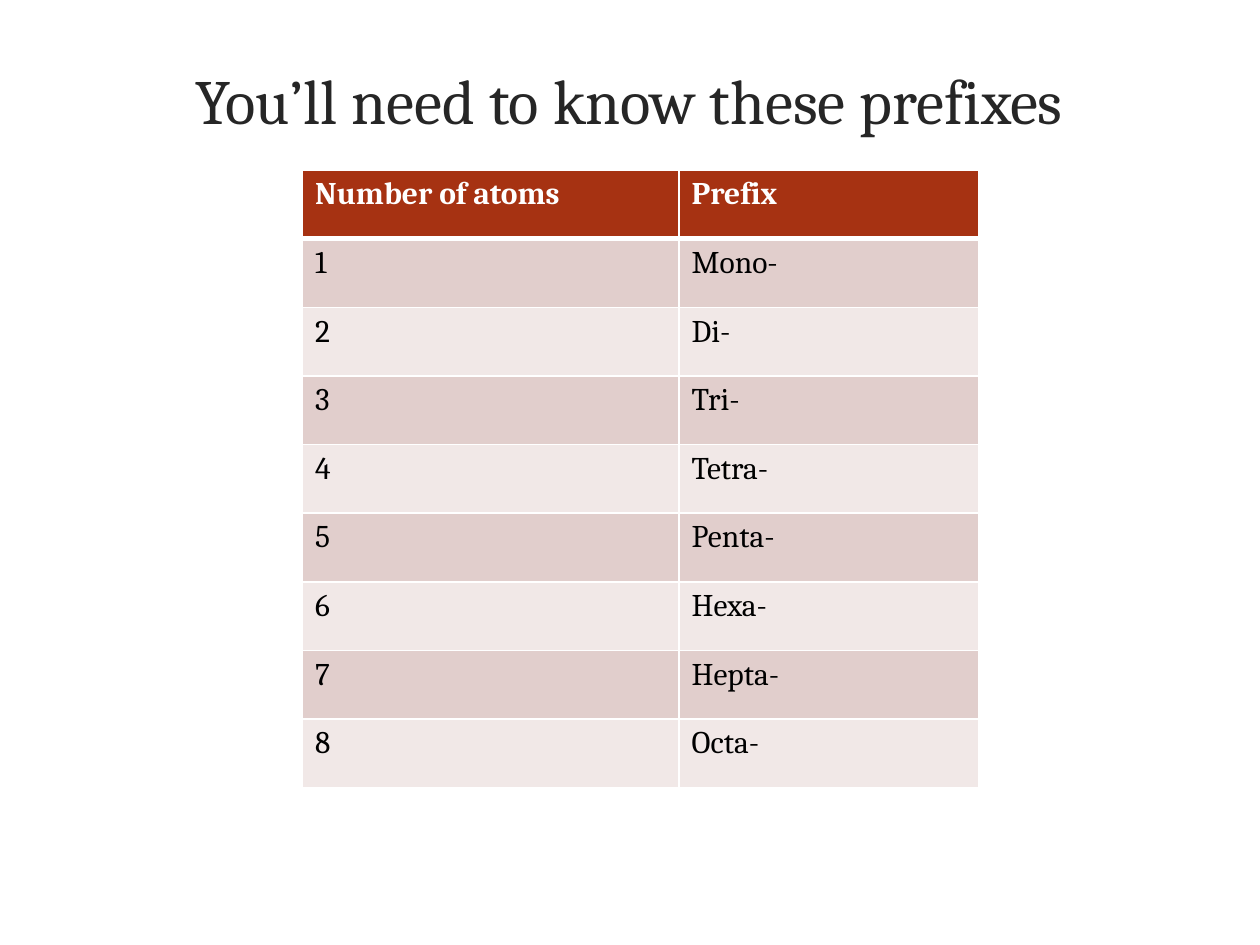
from lxml import etree
from pptx import Presentation
from pptx.dml.color import RGBColor
from pptx.enum.text import MSO_ANCHOR, PP_ALIGN
from pptx.oxml.ns import qn
from pptx.util import Cm, Pt

CENTER, MIDDLE = PP_ALIGN.CENTER, MSO_ANCHOR.MIDDLE

TITLE = "You’ll need to know these prefixes"
HEADER = ("Number of atoms", "Prefix")
PREFIXES = ("Mono-", "Di-", "Tri-", "Tetra-", "Penta-", "Hexa-", "Hepta-", "Octa-")

FONT = "Cambria"
WHITE = RGBColor(0xFF, 0xFF, 0xFF)
BLACK = RGBColor(0x00, 0x00, 0x00)
CHARCOAL = RGBColor(0x26, 0x26, 0x26)
RUST = RGBColor(0xA6, 0x32, 0x12)
BANDS = (RGBColor(0xF1, 0xE8, 0xE7), RGBColor(0xE1, 0xCE, 0xCC))

COL_WIDTHS = (Cm(7.59), Cm(6.05))
ROW_HEIGHT = Cm(1.383)


def format_text(p, size, color, bold=False):
    for r in p.runs:
        r.font.name = FONT
        r.font.size = Pt(size)
        r.font.bold = bold
        r.font.color.rgb = color


def add_borders(cell, top, bottom):
    """White borders, 1 pt at the sides; call before filling the cell."""
    tcPr = cell._tc.get_or_add_tcPr()
    for tag, width in (("a:lnL", 1), ("a:lnR", 1), ("a:lnT", top), ("a:lnB", bottom)):
        ln = etree.SubElement(tcPr, qn(tag), w=str(Pt(width)))
        fill = etree.SubElement(ln, qn("a:solidFill"))
        etree.SubElement(fill, qn("a:srgbClr"), val=str(WHITE))


def add_title(s):
    tf = s.shapes.add_textbox(Cm(1.52), Cm(0), Cm(22.33), Cm(4.01)).text_frame
    tf.word_wrap = True
    tf.vertical_anchor = MIDDLE
    tf.text = TITLE
    p = tf.paragraphs[0]
    p.alignment = CENTER
    format_text(p, 36, CHARCOAL)


def add_prefix_table(s):
    rows = [HEADER] + [(str(n), prefix) for n, prefix in enumerate(PREFIXES, 1)]
    table = s.shapes.add_table(len(rows), len(HEADER), Cm(6.1), Cm(3.43),
                               sum(COL_WIDTHS), ROW_HEIGHT * len(rows)).table
    for column, width in zip(table.columns, COL_WIDTHS):
        column.width = width
    for i, row in enumerate(rows):
        table.rows[i].height = ROW_HEIGHT
        is_header = i == 0
        for j, text in enumerate(row):
            cell = table.cell(i, j)
            cell.text = text
            format_text(cell.text_frame.paragraphs[0], 18,
                        WHITE if is_header else BLACK, is_header)
            add_borders(cell, top=3 if i == 1 else 1, bottom=3 if is_header else 1)
            cell.fill.solid()
            cell.fill.fore_color.rgb = RUST if is_header else BANDS[i % 2]


def main():
    prs = Presentation()
    prs.slide_width, prs.slide_height = Cm(25.4), Cm(19.05)
    s = prs.slides.add_slide(prs.slide_layouts[6])
    add_title(s)
    add_prefix_table(s)
    prs.save("out.pptx")


if __name__ == "__main__":
    main()
